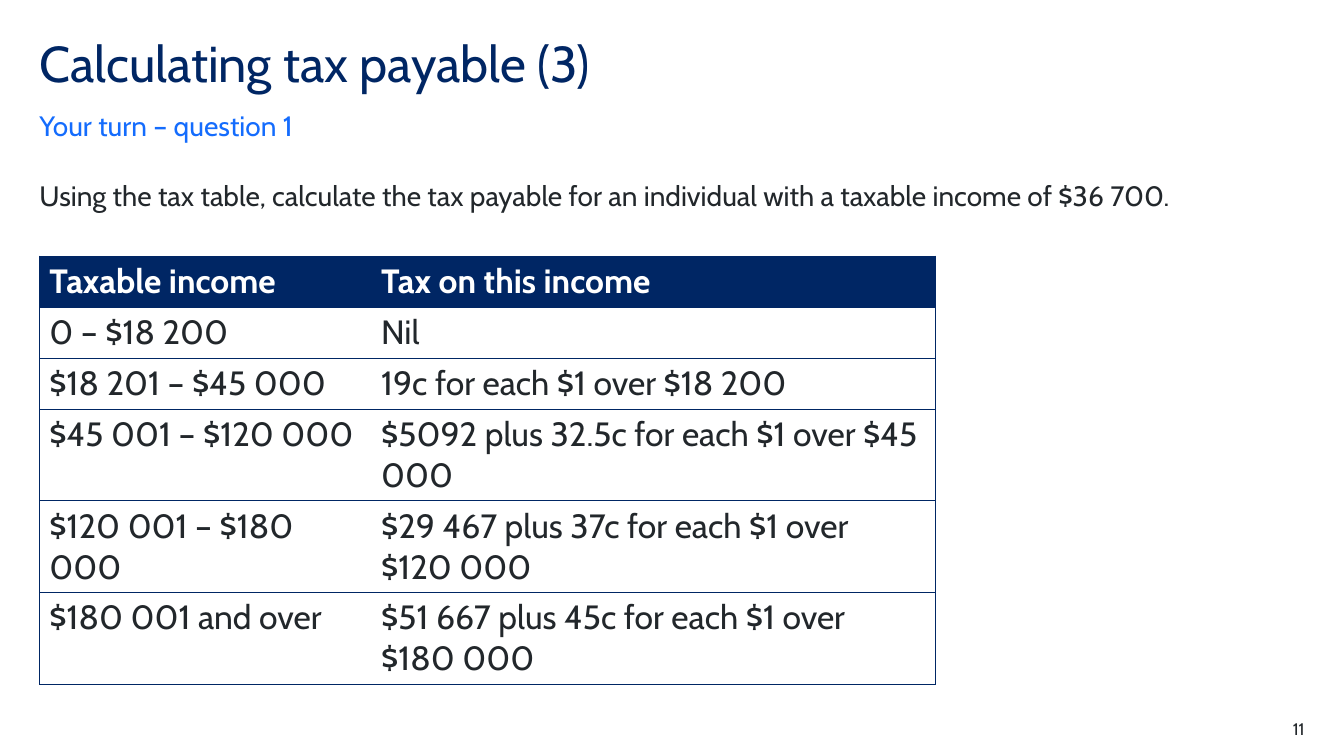
from lxml import etree
from pptx import Presentation
from pptx import util as u
from pptx.dml.color import RGBColor
from pptx.enum import text
from pptx.oxml import ns

WIDTH, HEIGHT = 13.33, 7.5
MARGIN = 0.39
FONT = "Cabin"
NAVY, BLUE, INK, WHITE = "002664", "146CFD", "22272B", "FFFFFF"
COLUMNS = [3.29, 5.6]
ROWS = [0.41] * 5 + [0.28]
TAX_RATES = [
    ("Taxable income", "Tax on this income"),
    ("0 – $18 200", "Nil"),
    ("$18 201 – $45 000", "19c for each $1 over $18 200"),
    ("$45 001 – $120 000", "$5092 plus 32.5c for each $1 over $45 000"),
    ("$120 001 – $180 000", "$29 467 plus 37c for each $1 over $120 000"),
    ("$180 001 and over", "$51 667 plus 45c for each $1 over $180 000"),
]


def colour(value):
    """Turn a hex string into a colour."""
    return RGBColor.from_string(value)


def write(frame, words, size=20, ink=INK, bold=False, align=text.PP_ALIGN.LEFT,
          spacing=None, after=0):
    """Write one formatted paragraph into a text frame."""
    para = frame.paragraphs[0]
    para.alignment = align
    para.line_spacing = spacing
    para.space_before, para.space_after = u.Pt(0), u.Pt(after)
    span = para.add_run()
    span.text = words
    span.font.name, span.font.size, span.font.bold = FONT, u.Pt(size), bold
    span.font.color.rgb = colour(ink)


def place_text(shape, box, words, anchor=text.MSO_ANCHOR.TOP, **style):
    """Fit a text shape to its box and fill it."""
    shape.left, shape.top, shape.width, shape.height = map(u.Inches, box)
    frame = shape.text_frame
    frame.word_wrap = True
    frame.auto_size = text.MSO_AUTO_SIZE.NONE
    frame.vertical_anchor = anchor
    frame.margin_left = frame.margin_top = frame.margin_right = frame.margin_bottom = 0
    write(frame, words, **style)


def add_text(page, box, words, **style):
    """Add a text box with one paragraph."""
    place_text(page.shapes.add_textbox(0, 0, 0, 0), box, words, **style)


def add_borders(cell, visible):
    """Draw the visible sides of a cell and clear the others."""
    properties = cell._tc.get_or_add_tcPr()
    for side in "LRTB":
        line = etree.SubElement(properties, ns.qn(f"a:ln{side}"), w=str(u.Pt(0.5)))
        if side in visible:
            fill = etree.SubElement(line, ns.qn("a:solidFill"))
            etree.SubElement(fill, ns.qn("a:srgbClr"), val=NAVY)
        else:
            etree.SubElement(line, ns.qn("a:noFill"))


def header(page, box):
    """Place the title and the subtitle below it."""
    left, top, width, height = box
    place_text(page.shapes.title, (left, top, width, 0.6), "Calculating tax payable (3)",
               size=36, ink=NAVY, spacing=0.9)
    add_text(page, (left, top + height - 0.34, width, 0.34), "Your turn – question 1",
             anchor=text.MSO_ANCHOR.BOTTOM, ink=BLUE, after=12)


def tax_table(page, left, top):
    """Place the tax rates in a table with horizontal rules."""
    table = page.shapes.add_table(
        len(ROWS), len(COLUMNS), u.Inches(left), u.Inches(top),
        u.Inches(sum(COLUMNS)), u.Inches(sum(ROWS))).table
    table.horz_banding = False
    for column, width in zip(table.columns, COLUMNS):
        column.width = u.Inches(width)
    for row, height, entries in zip(table.rows, ROWS, TAX_RATES):
        row.height = u.Inches(height)
        heading = entries == TAX_RATES[0]
        for cell, words, edge in zip(row.cells, entries, "LR"):
            add_borders(cell, edge + "TB")
            if heading:
                cell.fill.solid()
                cell.fill.fore_color.rgb = colour(NAVY)
            else:
                cell.fill.background()
            write(cell.text_frame, words, size=24, bold=heading,
                  ink=WHITE if heading else INK)


def question_slide(deck):
    """Build the slide with the question and its tax table."""
    page = deck.slides.add_slide(deck.slide_layouts[5])
    full = WIDTH - 2 * MARGIN
    header(page, (MARGIN, MARGIN, 11.02, 1.02))
    add_text(page, (MARGIN, 1.77, full, 0.6),
             "Using the tax table, calculate the tax payable for an individual "
             "with a taxable income of $36 700.", after=12)
    tax_table(page, MARGIN, 2.54)
    add_text(page, (WIDTH - MARGIN - 0.79, 7.13, 0.79, 0.2), "11", size=12,
             align=text.PP_ALIGN.RIGHT)


def main():
    """Create and save the deck."""
    deck = Presentation()
    deck.slide_width, deck.slide_height = u.Inches(WIDTH), u.Inches(HEIGHT)
    question_slide(deck)
    deck.save("out.pptx")


if __name__ == "__main__":
    main()
